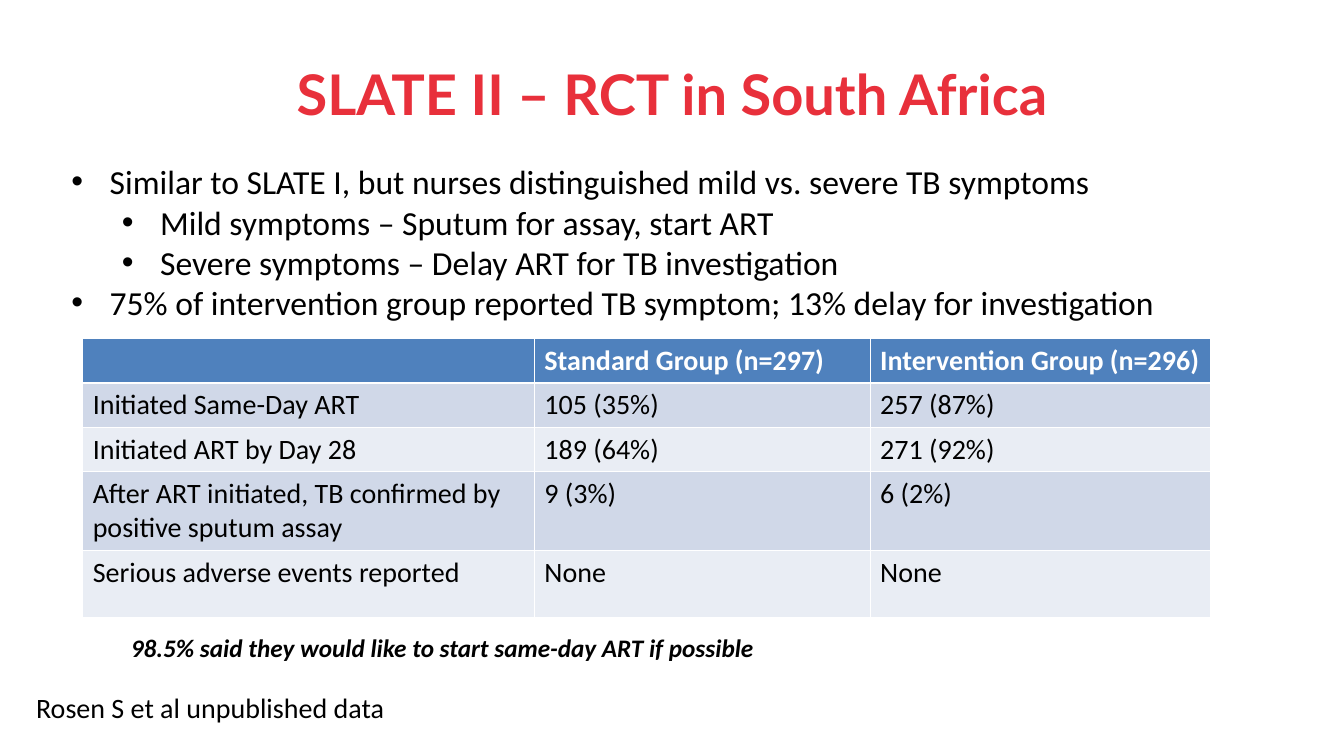
from lxml import etree
from pptx import Presentation
from pptx.dml.color import RGBColor
from pptx.enum import text
from pptx.oxml import ns
from pptx.util import Inches, Pt

RED = RGBColor(0xE8, 0x30, 0x3B)
BLUE = RGBColor(0x4F, 0x81, 0xBD)
DARK = RGBColor(0xD0, 0xD8, 0xE8)
PALE = RGBColor(0xE9, 0xED, 0xF4)
BLACK = RGBColor(0, 0, 0)
WHITE = RGBColor(255, 255, 255)

POINTS = [
    (0, "Similar to SLATE I, but nurses distinguished mild vs. severe TB symptoms"),
    (1, "Mild symptoms – Sputum for assay, start ART"),
    (1, "Severe symptoms – Delay ART for TB investigation"),
    (0, "75% of intervention group reported TB symptom; 13% delay for investigation"),
]
ROWS = [
    ("", "Standard Group (n=297)", "Intervention Group (n=296)"),
    ("Initiated Same-Day ART", "105 (35%)", "257 (87%)"),
    ("Initiated ART by Day 28", "189 (64%)", "271 (92%)"),
    ("After ART initiated, TB confirmed by positive sputum assay",
     "9 (3%)", "6 (2%)"),
    ("Serious adverse events reported", "None", "None"),
]
WIDTHS = (4.48, 3.33, 3.38)
HEIGHTS = (0.43, 0.43, 0.43, 0.75, 0.66)


def style(para, size, color=BLACK, bold=False, italic=False, face="Calibri"):
    for font in [para.font] + [run.font for run in para.runs]:
        font.name, font.size = face, Pt(size)
        font.bold, font.italic = bold, italic
        font.color.rgb = color


def add_title(slide, box):
    title = slide.shapes.title
    title.left, title.top, title.width, title.height = map(Inches, box)
    frame = title.text_frame
    frame.text = "SLATE II – RCT in South Africa"
    frame.vertical_anchor = text.MSO_ANCHOR.MIDDLE
    para = frame.paragraphs[0]
    para.alignment = text.PP_ALIGN.CENTER
    style(para, 40, RED, bold=True, face="Lato")


def add_list(slide, box):
    frame = slide.shapes.add_textbox(*map(Inches, box)).text_frame
    frame.word_wrap = True
    for i, (level, line) in enumerate(POINTS):
        para = frame.paragraphs[0] if i == 0 else frame.add_paragraph()
        para.text, para.level = line, level
        props = para._p.get_or_add_pPr()
        props.set("marL", str(Inches(0.38 + 0.5 * level)))
        props.set("indent", str(Inches(-0.38)))
        face = etree.SubElement(props, ns.qn("a:buFont"))
        face.set("typeface", "Arial")
        mark = etree.SubElement(props, ns.qn("a:buChar"))
        mark.set("char", "•")
        style(para, 24)


def add_results(slide, box):
    # White cell borders come from the default table style
    table = slide.shapes.add_table(
        len(ROWS), len(WIDTHS), *map(Inches, box)).table
    for col, width in zip(table.columns, WIDTHS):
        col.width = Inches(width)
    for r, (row, height) in enumerate(zip(ROWS, HEIGHTS)):
        table.rows[r].height = Inches(height)
        head = r == 0
        for c, value in enumerate(row):
            cell = table.cell(r, c)
            cell.text = value
            cell.fill.solid()
            cell.fill.fore_color.rgb = BLUE if head else DARK if r % 2 else PALE
            style(cell.text_frame.paragraphs[0], 20,
                  WHITE if head else BLACK, bold=head)


def add_note(slide, box, line, size, wrap=True, strong=False):
    frame = slide.shapes.add_textbox(*map(Inches, box)).text_frame
    frame.word_wrap = wrap
    frame.text = line
    style(frame.paragraphs[0], size, bold=strong, italic=strong)


def main():
    deck = Presentation()
    deck.slide_width, deck.slide_height = Inches(13.33), Inches(7.5)
    slide = deck.slides.add_slide(deck.slide_layouts[5])

    # Heading, findings and results
    add_title(slide, (0.82, 0.3, 11.69, 1.25))
    add_results(slide, (0.82, 3.36, sum(WIDTHS), sum(HEIGHTS)))
    add_list(slide, (0.61, 1.55, 12.16, 2.54))

    # Patient view and source
    add_note(slide, (1.2, 6.22, 6.45, 0.4),
             "98.5% said they would like to start same-day ART if possible",
             18, wrap=False, strong=True)
    add_note(slide, (0.26, 6.8, 4.13, 0.44),
             "Rosen S et al unpublished data", 20)

    deck.save("out.pptx")


if __name__ == "__main__":
    main()
